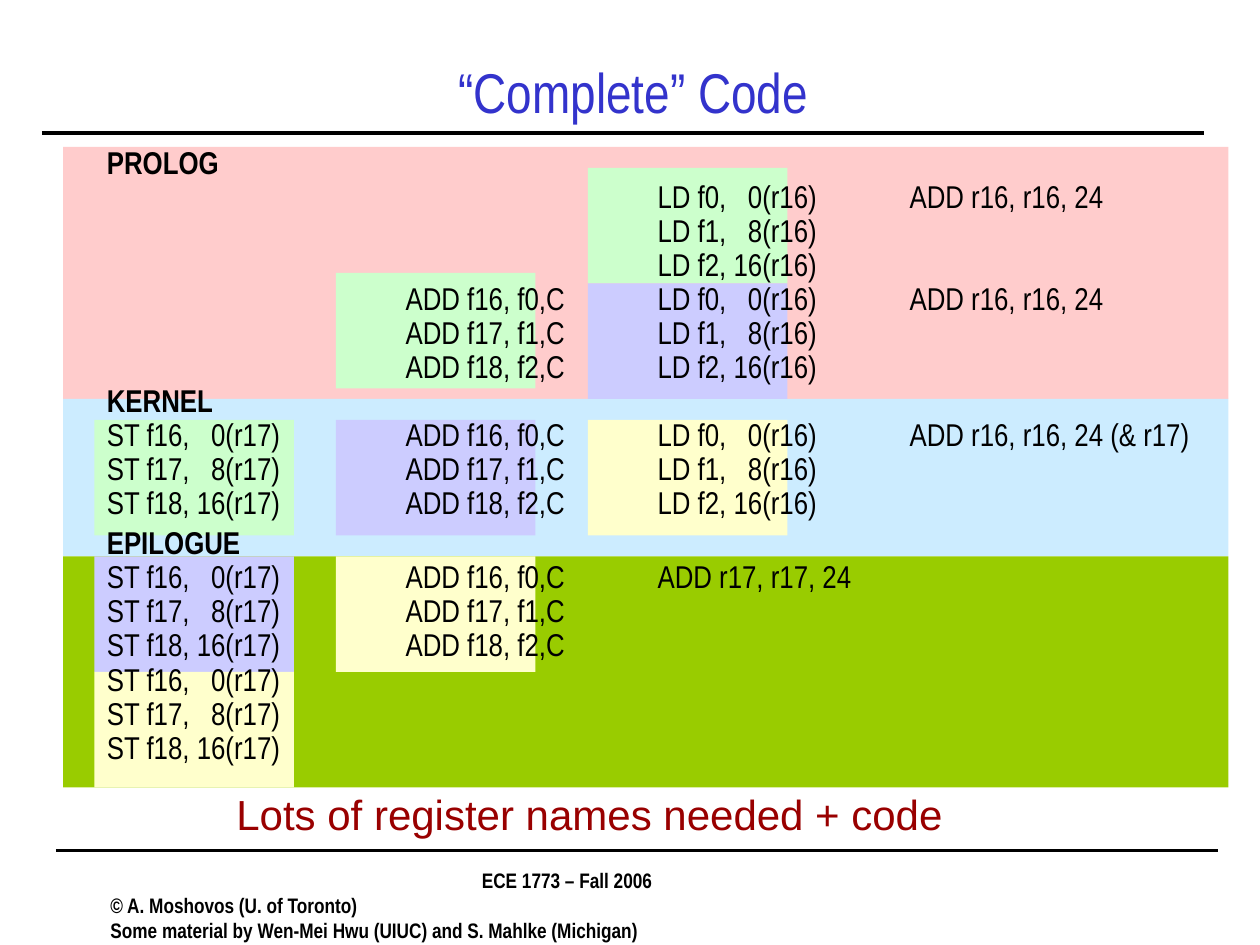
from lxml.etree import SubElement
from pptx import Presentation
from pptx.dml.color import RGBColor
from pptx.enum.shapes import MSO_CONNECTOR, MSO_SHAPE
from pptx.enum.text import MSO_ANCHOR, PP_ALIGN
from pptx.oxml.ns import qn
from pptx.util import Pt

NARROW = "Arial Narrow"
TITLE = "“Complete” Code"
TAKEAWAY = "Lots of register names needed + code"
FOOTER = [
    "ECE 1773 – Fall 2006",
    "© A. Moshovos (U. of Toronto)",
    "Some material by Wen-Mei Hwu (UIUC) and S. Mahlke (Michigan)",
]

LOADS = ["LD f0,   0(r16)", "LD f1,   8(r16)", "LD f2, 16(r16)"]
ADDS = ["ADD f16, f0,C", "ADD f17, f1,C", "ADD f18, f2,C"]
STORES = ["ST f16,   0(r17)", "ST f17,   8(r17)", "ST f18, 16(r17)"]
IDLE = ["", "", ""]
BUMP = ["ADD r16, r16, 24", "", ""]
KERNEL_BUMP = ["ADD r16, r16, 24 (& r17)", "", ""]
FINAL_BUMP = ["ADD r17, r17, 24", "", ""]

SECTIONS = [
    ("PROLOG", [(IDLE, IDLE, LOADS, BUMP), (IDLE, ADDS, LOADS, BUMP)]),
    ("KERNEL", [(STORES, ADDS, LOADS, KERNEL_BUMP)]),
    ("EPILOGUE", [(STORES, ADDS, FINAL_BUMP), (STORES,)]),
]
TAB_STOPS = [170.7, 314.7, 458.7]

BANDS = [("FFCCCC", 84, 144), ("CCECFF", 228, 90), ("99CC00", 318, 132)]
STAGE_LEFTS = [336, 192, 54]
ITERATIONS = [
    ("CCFFCC", [96, 156, 240]),
    ("CCCCFF", [162, 240, 318]),
    ("FFFFCC", [240, 318, 384]),
]
RULES = [(24, 688, 76), (32, 696, 486)]

deck = Presentation()
deck.slide_width, deck.slide_height = Pt(720), Pt(540)
slide = deck.slides.add_slide(deck.slide_layouts[6])


def color(value):
    return RGBColor.from_string(value)


def add_rule(left, right, y):
    rule = slide.shapes.add_connector(
        MSO_CONNECTOR.STRAIGHT, Pt(left), Pt(y), Pt(right), Pt(y))
    rule.line.color.rgb = color("000000")
    rule.line.width = Pt(2.25)
    SubElement(rule._element.spPr, qn("a:effectLst"))


def add_block(fill, left, top, width, height):
    block = slide.shapes.add_shape(
        MSO_SHAPE.RECTANGLE, Pt(left), Pt(top), Pt(width), Pt(height))
    block.shadow.inherit = False
    block.fill.solid()
    block.fill.fore_color.rgb = color(fill)
    block.line.fill.background()


def add_text(lines, box, size, ink="000000", font=NARROW, bold=False, wrap=True):
    frame = slide.shapes.add_textbox(*map(Pt, box)).text_frame
    frame.word_wrap = wrap
    frame.text = "\n".join(lines)
    for paragraph in frame.paragraphs:
        paragraph.font.name = font
        paragraph.font.size = Pt(size)
        paragraph.font.bold = bold
        paragraph.font.color.rgb = color(ink)
    return frame


def set_tabs(paragraph):
    properties = paragraph._p.get_or_add_pPr()
    tabs = properties.makeelement(qn("a:tabLst"), {})
    for stop in TAB_STOPS:
        SubElement(tabs, qn("a:tab"), pos=str(Pt(stop)), algn="l")
    properties.find(qn("a:defRPr")).addprevious(tabs)


for rule in RULES:
    add_rule(*rule)

footer = add_text(FOOTER, (56, 492, 536, 36), 12, bold=True)
footer.paragraphs[0].alignment = PP_ALIGN.CENTER

for fill, top, height in BANDS:
    add_block(fill, 36, top, 666, height)
for fill, tops in ITERATIONS:
    for left, top in zip(STAGE_LEFTS, tops):
        add_block(fill, left, top, 114, 66)

title = add_text([TITLE], (56, 32, 612, 40), 32, ink="3333CC")
title.vertical_anchor = MSO_ANCHOR.MIDDLE
title.paragraphs[0].alignment = PP_ALIGN.CENTER

code_lines = []
for heading, groups in SECTIONS:
    code_lines.append(heading)
    for group in groups:
        code_lines += ["\t".join(row).rstrip("\t") for row in zip(*group)]

headings = [heading for heading, _ in SECTIONS]
code = add_text(code_lines, (54, 80.5, 648, 399), 18)
for paragraph in code.paragraphs:
    paragraph.line_spacing = 0.9
    paragraph.font.bold = paragraph.text in headings
    if paragraph.text == "EPILOGUE":
        paragraph.space_before = Pt(3.6)
    set_tabs(paragraph)

add_text([TAKEAWAY], (128, 447, 423, 36), 24, ink="990000", font="Arial", wrap=False)

deck.save("out.pptx")
